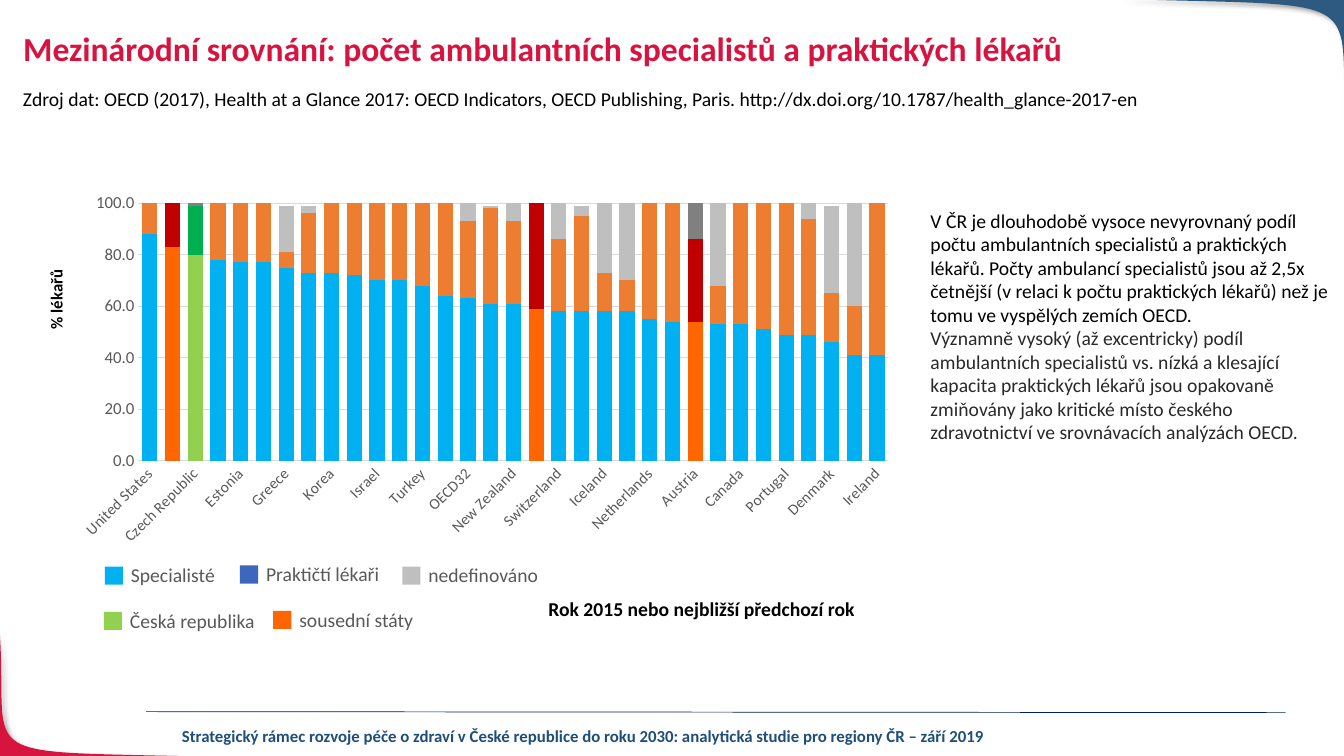
from lxml import etree
from pptx import Presentation
from pptx.chart.data import CategoryChartData
from pptx.dml.color import RGBColor
from pptx.enum.chart import XL_CHART_TYPE, XL_TICK_MARK
from pptx.enum.shapes import MSO_CONNECTOR, MSO_SHAPE
from pptx.enum.text import MSO_ANCHOR, PP_ALIGN
from pptx.oxml import parse_xml
from pptx.oxml.ns import nsdecls, qn
from pptx.util import Inches, Pt

STACKED = XL_CHART_TYPE.COLUMN_STACKED
NO_TICK = XL_TICK_MARK.NONE
STRAIGHT = MSO_CONNECTOR.STRAIGHT
RECT = MSO_SHAPE.RECTANGLE
TOP = MSO_ANCHOR.TOP
LEFT, CENTER = PP_ALIGN.LEFT, PP_ALIGN.CENTER

FONT = "Calibri"
COLORS = {
    "red": "D71440", "blue": "2E5980", "rule": "002060", "footer": "1F4E79",
    "black": "000000", "dark": "292929", "label": "595959", "grid": "D9D9D9",
    "specialists": "00B0F0", "gps": "ED7D31", "undefined": "BFBFBF",
    "gps_key": "3D67BC", "czech": "92D050", "czech_gps": "00B050",
    "neighbour": "FF6600", "neighbour_gps": "C00000", "highlight": "808080",
}
COUNTRIES = [
    "United States", "Poland", "Czech Republic", "Latvia", "Estonia", "Italy", "Greece",
    "Slovenia", "Korea", "United Kingdom", "Israel", "Luxembourg", "Turkey", "Mexico",
    "OECD32", "Belgium", "New Zealand", "Germany", "Switzerland", "Finland", "Iceland",
    "Hungary", "Netherlands", "France", "Austria", "Sweden", "Canada", "Chile",
    "Portugal", "Australia", "Denmark", "Norway", "Ireland",
]
SERIES = [
    ("Series 1", "specialists",
     [88, 83, 80, 78, 77, 77, 75, 73, 73, 72, 70, 70, 68, 64, 63, 61, 61, 59, 58, 58, 58,
      58, 55, 54, 54, 53, 53, 51, 49, 49, 46, 41, 41],
     {"Poland": "neighbour", "Czech Republic": "czech", "Germany": "neighbour",
      "Austria": "neighbour"}),
    ("Series 2", "gps",
     [12, 17, 19, 22, 23, 23, 6, 23, 27, 28, 30, 30, 32, 36, 30, 37, 32, 41, 28, 37, 15,
      12, 45, 46, 32, 15, 47, 49, 51, 45, 19, 19, 59],
     {"Poland": "neighbour_gps", "Czech Republic": "czech_gps",
      "Germany": "neighbour_gps", "Austria": "neighbour_gps"}),
    ("Series 3", "undefined",
     [None, 0, 1, 0, 0, None, 18, 3, 0, None, None, 0, None, None, 7, 1, 8, 0, 14, 4, 27,
      31, 0, None, 14, 32, None, None, None, 6, 34, 40, 0],
     {"Czech Republic": "highlight", "Austria": "highlight"}),
]
LEGEND = [
    ("Specialisté", "specialists", 1.04, 5.62, 1.18),
    ("Praktičtí lékaři", "gps_key", 2.38, 5.61, 1.61),
    ("nedefinováno", "undefined", 3.99, 5.62, 1.61),
    ("Česká republika", "czech", 1.03, 6.07, 1.51),
    ("sousední státy", "neighbour", 2.71, 6.06, 1.35),
]
TITLE = "Mezinárodní srovnání: počet ambulantních specialistů a praktických lékařů"
SOURCE = ("Zdroj dat: OECD (2017), Health at a Glance 2017: OECD Indicators, OECD Publishing, "
          "Paris. http://dx.doi.org/10.1787/health_glance-2017-en")
FOOTER = ("Strategický rámec rozvoje péče o zdraví v České republice do roku 2030: "
          "analytická studie pro regiony ČR – září 2019")
COMMENTS = [
    ("V ČR je dlouhodobě vysoce nevyrovnaný podíl počtu ambulantních specialistů a "
     "praktických lékařů. Počty ambulancí specialistů jsou až 2,5x četnější (v relaci k počtu "
     "praktických lékařů) než je tomu ve vyspělých zemích OECD.", "black"),
    ("Významně vysoký (až excentricky) podíl ambulantních specialistů vs. nízká a klesající "
     "kapacita praktických lékařů jsou opakovaně zmiňovány jako kritické místo českého "
     "zdravotnictví ve srovnávacích analýzách OECD.", "dark"),
]


def rgb(name):
    """Return the named colour."""
    return RGBColor.from_string(COLORS[name])


def paint(part, color):
    """Fill a shape, series or point with one colour."""
    part.fill.solid()
    part.fill.fore_color.rgb = rgb(color)


def style(font, size, color, bold=False):
    """Set the typeface, size, colour and weight of a font."""
    font.name, font.size, font.bold = FONT, Pt(size), bold
    font.color.rgb = rgb(color)


def add_text(s, box, lines, size=14, bold=False, align=LEFT, wrap=True):
    """Add a text box with one paragraph for each (text, colour) pair."""
    tb = s.shapes.add_textbox(*map(Inches, box))
    tf = tb.text_frame
    tf.word_wrap = wrap
    tf.text = "\n".join(text for text, _ in lines)
    for p, (_, color) in zip(tf.paragraphs, lines):
        p.alignment = align
        style(p.runs[0].font, size, color, bold)
    return tb


def add_corner(s, start, control1, control2, end, corner, color):
    """Add a curved corner ornament with a soft shadow."""
    steps = 40
    curve = []
    for i in range(1, steps + 1):
        t = i / steps
        weights = ((1 - t) ** 3, 3 * t * (1 - t) ** 2, 3 * t * t * (1 - t), t ** 3)
        curve.append(tuple(
            Inches(sum(w * v for w, v in zip(weights, axis)))
            for axis in zip(start, control1, control2, end)))
    fb = s.shapes.build_freeform(*map(Inches, start))
    fb.add_line_segments(curve + [tuple(map(Inches, corner))])
    sp = fb.convert_to_shape()
    paint(sp, color)
    sp.line.fill.background()
    sp._element.spPr.append(parse_xml(
        f'<a:effectLst {nsdecls("a")}><a:outerShdw blurRad="50800" dist="38100" dir="2700000">'
        '<a:srgbClr val="000000"><a:alpha val="40000"/></a:srgbClr></a:outerShdw></a:effectLst>'))


def add_rule(s, x1, y1, x2, y2):
    """Add the thin line above the footer."""
    line = s.shapes.add_connector(STRAIGHT, *map(Inches, (x1, y1, x2, y2)))
    line.line.color.rgb = rgb("rule")
    line.line.width = Pt(0.5)
    etree.SubElement(line._element.spPr, qn("a:effectLst"))


def add_key(s, text, color, x, y, width):
    """Add a legend swatch with its label."""
    sp = s.shapes.add_shape(RECT, *map(Inches, (x, y, 0.18, 0.18)))
    sp.shadow.inherit = False
    paint(sp, color)
    sp.line.fill.background()
    add_text(s, (x + 0.16, y - 0.08, width, 0.34), [(text, "label")], wrap=False)


def format_axes(chart):
    """Format both axes and slant the country names."""
    cat, val = chart.category_axis, chart.value_axis
    for axis, size in ((cat, 11), (val, 12)):
        axis.major_tick_mark = axis.minor_tick_mark = NO_TICK
        style(axis.tick_labels.font, size, "label")
    val.minimum_scale, val.maximum_scale, val.major_unit = 0, 100, 20
    val.tick_labels.number_format = "0.0"
    val.tick_labels.number_format_is_linked = False
    val.format.line.fill.background()
    for line in (cat.format.line, val.major_gridlines.format.line):
        line.color.rgb = rgb("grid")
        line.width = Pt(0.75)
    cat._element.txPr.find(qn("a:bodyPr")).set("rot", "-2700000")
    cat._element.find(qn("c:noMultiLvlLbl")).addprevious(
        parse_xml(f'<c:tickLblSkip {nsdecls("c")} val="2"/>'))


def place_plot(chart, x, y, w, h):
    """Fix the inner plot area as fractions of the chart."""
    area = chart._chartSpace.chart.plotArea
    for old in area.findall(qn("c:layout")):
        area.remove(old)
    sizes = "".join(f'<c:{k} val="{v}"/>' for k, v in zip("xywh", (x, y, w, h)))
    area.insert(0, parse_xml(
        f'<c:layout {nsdecls("c")}><c:manualLayout><c:layoutTarget val="inner"/>'
        f'<c:xMode val="edge"/><c:yMode val="edge"/>{sizes}</c:manualLayout></c:layout>'))


def add_doctors_chart(s, box):
    """Add the stacked columns of doctor shares by country."""
    data = CategoryChartData()
    data.categories = COUNTRIES
    for name, _, values, _ in SERIES:
        data.add_series(name, values)
    chart = s.shapes.add_chart(STACKED, *map(Inches, box), data).chart
    style(chart.font, 10, "black")
    chart.has_legend = chart.has_title = False
    plot = chart.plots[0]
    plot.gap_width, plot.overlap, plot.vary_by_categories = 50, 100, False
    for series, (_, color, _, marked) in zip(plot.series, SERIES):
        paint(series.format, color)
        for country, point_color in marked.items():
            paint(series.points[COUNTRIES.index(country)].format, point_color)
    format_axes(chart)
    place_plot(chart, 0.09, 0.04, 0.89, 0.7)


def set_title(s):
    """Place and format the slide title."""
    title = s.shapes.title
    title.left, title.top, title.width, title.height = map(Inches, (0.13, 0.27, 11.5, 0.69))
    tf = title.text_frame
    tf.text = TITLE
    tf.vertical_anchor = TOP
    p = tf.paragraphs[0]
    p.alignment, p.line_spacing = LEFT, 0.9
    style(p.runs[0].font, 24, "red", True)


def main():
    """Build the slide and save it."""
    prs = Presentation()
    prs.slide_width, prs.slide_height = Inches(13.33), Inches(7.5)
    s = prs.slides.add_slide(prs.slide_layouts[5])
    add_corner(s, (2.13, 7.51), (-0.34, 7.44), (0.08, 7.59), (0, 6.3), (-0.01, 7.51), "red")
    add_corner(s, (11.11, -0.01), (13.7, 0.07), (13.26, -0.1), (13.35, 1.42),
               (13.35, -0.01), "blue")
    add_rule(s, 1.45, 7.06, 12.75, 7.07)
    add_text(s, (1.68, 7.15, 8.21, 0.3), [(FOOTER, "footer")], 12, True, CENTER)
    set_title(s)
    add_text(s, (0.13, 0.81, 12.77, 0.34), [(SOURCE, "black")])
    add_doctors_chart(s, (0.62, 1.87, 8.36, 3.65))
    add_text(s, (5.34, 5.87, 3.8, 0.34), [("Rok 2015 nebo nejbližší předchozí rok", "black")],
             bold=True)
    axis_title = add_text(s, (0.15, 2.81, 0.81, 0.3), [("% lékařů", "black")], 12, True,
                          wrap=False)
    axis_title.rotation = 270
    for key in LEGEND:
        add_key(s, *key)
    add_text(s, (9.13, 2.02, 4.18, 2.69), COMMENTS)
    prs.save("out.pptx")


if __name__ == "__main__":
    main()
